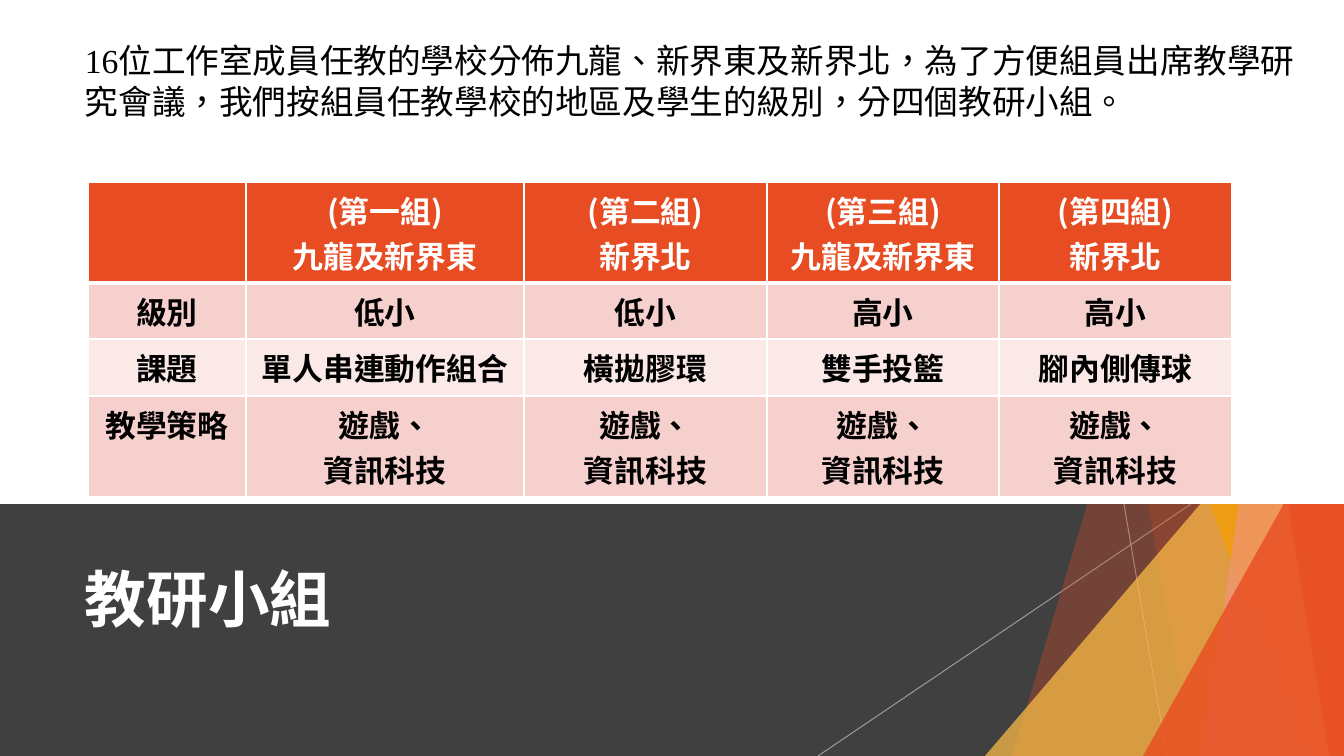
from lxml.etree import SubElement
from pptx import Presentation
from pptx.dml.color import RGBColor
from pptx.enum.shapes import MSO_CONNECTOR as CONN, MSO_SHAPE as SHAPE
from pptx.enum.text import MSO_ANCHOR as ANCHOR, PP_ALIGN as ALIGN
from pptx.oxml.ns import qn
from pptx.util import Pt

PX = 12192000 / 1344
SANS, SERIF = "Noto Sans CJK SC", "Times New Roman"
WHITE, BLACK, ORANGE = "FFFFFF", "000000", "E84C22"
BAND_DARK, BAND_LIGHT = "F6D0CD", "FBE9E8"

BANDS = [
    ([(1238, 0), (1344, 0), (1344, 756), (1012, 756)], ORANGE, 30),
    ([(1058, 0), (1344, 0), (1344, 756), (1193, 756)], ORANGE, 20),
    ([(1344, 336), (1344, 756), (985, 756)], "FFBD47", 72),
    ([(1029, 0), (1344, 0), (1344, 756), (1301, 756)], "F49D00", 70),
    ([(1313, 0), (1344, 0), (1344, 756), (1202, 756)], "F1947A", 70),
    ([(1206, 0), (1344, 0), (1344, 756), (1329, 756)], ORANGE, 65),
    ([(1344, 396), (1344, 756), (1143, 756)], ORANGE, 80),
]
COLS = [158, 278, 243, 232, 233]
ROWS = [101, 56, 57, 101]
STRATEGY = "遊戲、\n資訊科技"
CELLS = [
    ["", "(第一組)\n九龍及新界東", "(第二組)\n新界北", "(第三組)\n九龍及新界東", "(第四組)\n新界北"],
    ["級別", "低小", "低小", "高小", "高小"],
    ["課題", "單人串連動作組合", "橫拋膠環", "雙手投籃", "腳內側傳球"],
    ["教學策略"] + [STRATEGY] * 4,
]
INTRO = "位工作室成員任教的學校分佈九龍、新界東及新界北，為了方便組員出席教學研究會議，我們按組員任教學校的地區及學生的級別，分四個教研小組。"


def px(n):
    return round(n * PX)


def rgb(value):
    return RGBColor.from_string(value)


def set_alpha(fill, alpha):
    clr = fill._xPr.find(qn("a:solidFill"))[0]
    SubElement(clr, qn("a:alpha")).set("val", str(alpha * 1000))


def paint(sp, color, alpha=100):
    sp.shadow.inherit = False
    sp.fill.solid()
    sp.fill.fore_color.rgb = rgb(color)
    sp.line.fill.background()
    if alpha < 100:
        set_alpha(sp.fill, alpha)


def add_panel(shapes, box, color):
    paint(shapes.add_shape(SHAPE.RECTANGLE, *map(px, box)), color)


def add_band(shapes, points, color, alpha):
    builder = shapes.build_freeform(*points[0], scale=PX)
    builder.add_line_segments(points[1:], close=True)
    paint(builder.convert_to_shape(), color, alpha)


def add_ray(shapes, *ends):
    ray = shapes.add_connector(CONN.STRAIGHT, *map(px, ends))
    ray.line.width = Pt(0.75)
    ray.line.color.rgb = rgb("BFBFBF")
    set_alpha(ray.line.fill, 70)
    SubElement(ray._element.spPr, qn("a:effectLst"))


def add_run(p, text, color, font=SANS, **fmt):
    r = p.add_run()
    r.text = text
    r.font.color.rgb = rgb(color)
    for key, value in {"name": font, **fmt}.items():
        setattr(r.font, key, value)
    rPr = r._r.get_or_add_rPr()
    rPr.set("lang", "zh-TW")
    SubElement(rPr, qn("a:ea")).set("typeface", SANS)


def add_text(shapes, box, anchor=ANCHOR.TOP):
    tf = shapes.add_textbox(*map(px, box)).text_frame
    tf.word_wrap = True
    tf.vertical_anchor = anchor
    return tf.paragraphs[0]


def set_borders(cell, bottom, top):
    tcPr = cell._tc.get_or_add_tcPr()
    widths = {"lnL": 1, "lnR": 1, "lnT": top, "lnB": bottom}
    for i, (side, width) in enumerate(widths.items()):
        ln = tcPr.makeelement(qn("a:" + side), {"w": str(Pt(width))})
        fill = SubElement(ln, qn("a:solidFill"))
        SubElement(fill, qn("a:srgbClr")).set("val", WHITE)
        tcPr.insert(i, ln)


def fill_cell(cell, text, row):
    margins = {"margin_left": 12, "margin_right": 12, "margin_top": 6, "margin_bottom": 6}
    for key, value in margins.items():
        setattr(cell, key, px(value))
    cell.fill.solid()
    cell.fill.fore_color.rgb = rgb([ORANGE, BAND_DARK, BAND_LIGHT, BAND_DARK][row])
    set_borders(cell, bottom=1 if row else 3, top=3 if row == 1 else 1)
    tf = cell.text_frame
    for i, line in enumerate(text.split("\n")):
        p = tf.add_paragraph() if i else tf.paragraphs[0]
        p.alignment = ALIGN.CENTER
        if line:
            add_run(p, line, BLACK if row else WHITE, size=Pt(22), bold=True)


def add_groups_table(shapes, left, top):
    size = map(px, (left, top, sum(COLS), sum(ROWS)))
    table = shapes.add_table(len(ROWS), len(COLS), *size).table
    for col, width in zip(table.columns, COLS):
        col.width = px(width)
    for i, height in enumerate(ROWS):
        table.rows[i].height = px(height)
        for j, text in enumerate(CELLS[i]):
            fill_cell(table.cell(i, j), text, i)


def main():
    prs = Presentation()
    prs.slide_width, prs.slide_height = px(1344), px(756)
    shapes = prs.slides.add_slide(prs.slide_layouts[6]).shapes

    add_panel(shapes, (0, 504, 1344, 252), "404040")
    fan = shapes.add_group_shape().shapes
    add_ray(fan, 1124, 504, 1167, 756)
    add_ray(fan, 1191, 504, 818, 756)
    for points, color, alpha in BANDS:
        add_band(fan, points, color, alpha)

    title = add_text(shapes, (75, 525, 948, 145), ANCHOR.MIDDLE)
    add_run(title, "教研小組", WHITE, size=Pt(44), bold=True)

    add_panel(shapes, (0, 0, 1344, 504), WHITE)
    add_groups_table(shapes, 88, 182)

    intro = add_text(shapes, (75, 35, 1238, 92))
    intro.line_spacing = Pt(29)
    add_run(intro, "16", BLACK, SERIF, size=Pt(24))
    add_run(intro, INTRO, BLACK, size=Pt(24))

    prs.save("out.pptx")


if __name__ == "__main__":
    main()
